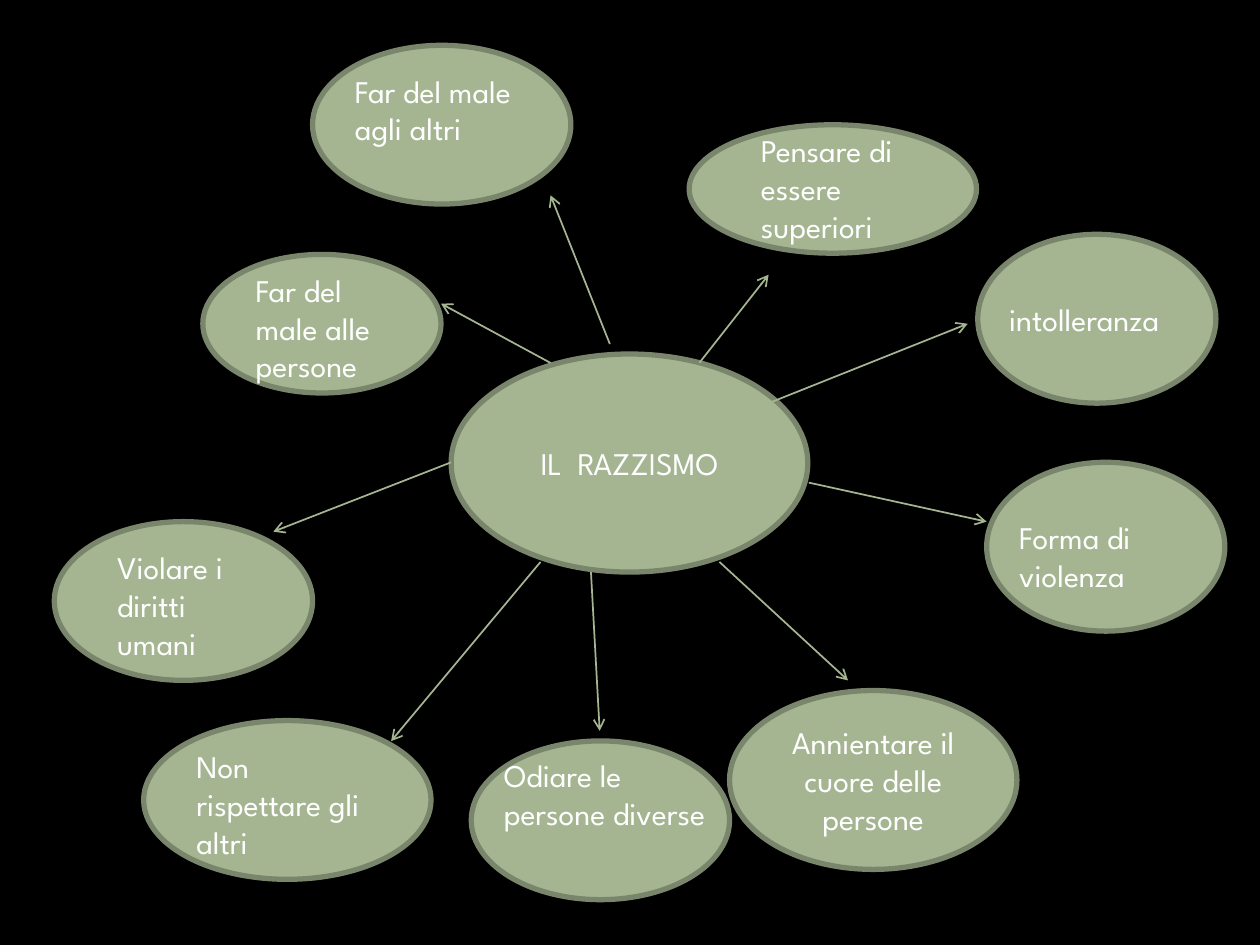
from lxml import etree
from pptx import Presentation
from pptx.dml.color import RGBColor
from pptx.enum.shapes import MSO_CONNECTOR, MSO_SHAPE
from pptx.enum.text import MSO_ANCHOR, MSO_AUTO_SIZE, PP_ALIGN
from pptx.oxml.ns import qn
from pptx.util import Pt

BLACK = RGBColor(0x00, 0x00, 0x00)
WHITE = RGBColor(0xFF, 0xFF, 0xFF)
SAGE = RGBColor(0xA5, 0xB5, 0x92)
DARK_SAGE = RGBColor(0x7A, 0x86, 0x6C)
FONT = {"name": "League Spartan", "size": Pt(18)}

prs = Presentation()
prs.slide_width, prs.slide_height = Pt(720), Pt(540)
s = prs.slides.add_slide(prs.slide_layouts[6])
s.background.fill.solid()
s.background.fill.fore_color.rgb = BLACK


def add_ellipse(box):
    sp = s.shapes.add_shape(MSO_SHAPE.OVAL, *map(Pt, box))
    sp.shadow.inherit = False
    sp.fill.solid()
    sp.fill.fore_color.rgb = SAGE
    sp.line.color.rgb = DARK_SAGE
    sp.line.width = Pt(3)
    return sp


def write(sp, text, align):
    tf = sp.text_frame
    tf.word_wrap = True
    p = tf.paragraphs[0]
    p.alignment = align
    r = p.add_run()
    r.text = text
    for key, value in FONT.items():
        setattr(r.font, key, value)
    r.font.color.rgb = WHITE
    return tf


centre = add_ellipse((257.8, 202.3, 203.8, 124.6))
write(centre, "IL  RAZZISMO", PP_ALIGN.CENTER).vertical_anchor = MSO_ANCHOR.MIDDLE

# text, arrow (from x, y, to x, y), ellipse box, text box (None: text inside the ellipse)
ideas = [
    ("Far del male alle persone", (314.6, 207.4, 252, 173.5),
     (115.9, 145.4, 136.1, 79.2), (139, 151.2, 102.2, 72.7)),
    ("Violare i diritti umani", (257.8, 264.2, 156.2, 303.8),
     (31, 298.1, 147.6, 90.7), (59.8, 309.6, 90.7, 72.7)),
    ("Non rispettare gli  altri", (308.9, 321.1, 223.5, 423.5),
     (82.1, 411.8, 164.2, 90.7), (105.1, 423.4, 118.8, 72.7)),
    ("Odiare le persone diverse", (337.7, 326.9, 342.7, 417.6),
     (269.3, 423.4, 147.6, 90.7), (280.8, 428.4, 141.8, 72.7)),
    ("Annientare il cuore delle persone", (411.1, 321.1, 484.6, 388.8),
     (416.9, 394.6, 164.2, 102.2), None),
    ("Forma di violenza", (462.2, 275.8, 563.8, 298.1),
     (563.8, 264.2, 136.1, 96.5), (575.3, 292.3, 118.8, 51.1)),
    ("intolleranza", (439.2, 230.4, 553, 185),
     (558.7, 133.9, 136.1, 96.5), (569.5, 167.8, 118.8, 28.8)),
    ("Pensare di essere superiori", (399.6, 207.4, 439.2, 157),
     (393.8, 71.3, 164.2, 73.4), (427.7, 71.3, 102.2, 72.7)),
    ("Far del male agli altri", (348.5, 196.6, 314.6, 111.6),
     (178.6, 25.9, 147.6, 90.7), (195.8, 37.4, 124.6, 51.1)),
]

for text, arrow, oval_box, text_box in ideas:
    cxn = s.shapes.add_connector(MSO_CONNECTOR.STRAIGHT, *map(Pt, arrow))
    cxn.line.color.rgb = SAGE
    cxn.line.width = Pt(1)
    etree.SubElement(cxn.line._get_or_add_ln(), qn("a:tailEnd"), type="arrow")
    etree.SubElement(cxn._element.spPr, qn("a:effectLst"))

    oval = add_ellipse(oval_box)
    if text_box:
        label = s.shapes.add_textbox(*map(Pt, text_box))
        write(label, text, PP_ALIGN.LEFT).auto_size = MSO_AUTO_SIZE.SHAPE_TO_FIT_TEXT
    else:
        write(oval, text, PP_ALIGN.CENTER).vertical_anchor = MSO_ANCHOR.MIDDLE

prs.save("out.pptx")
